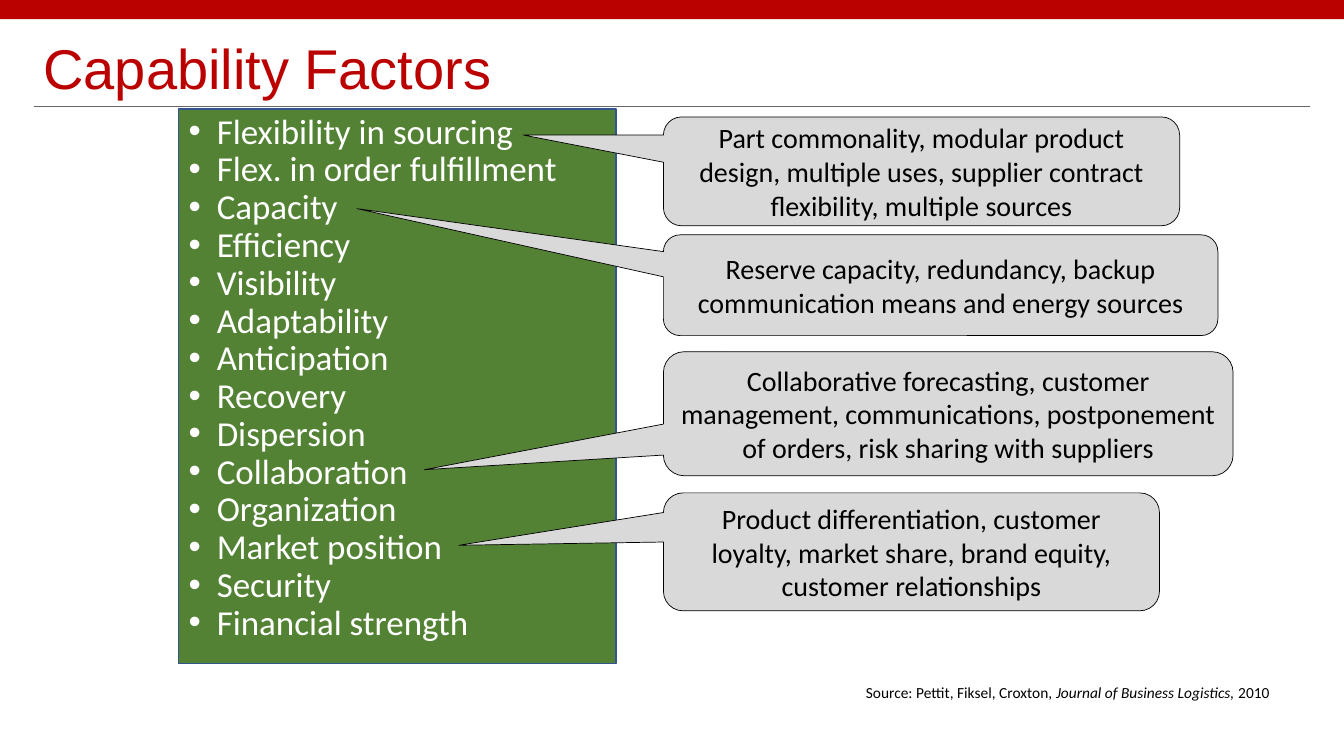
"""Build the Capability Factors slide."""
from dataclasses import dataclass

import pptx
import pptx.dml.color
import pptx.enum.shapes
import pptx.enum.text
import pptx.oxml
import pptx.oxml.ns
import pptx.util

Inches = pptx.util.Inches
Pt = pptx.util.Pt
Shape = pptx.enum.shapes.MSO_SHAPE
Align = pptx.enum.text.PP_ALIGN
Anchor = pptx.enum.text.MSO_ANCHOR

COLORS = {
    "red": "BB0000",
    "rule": "666666",
    "green": "548235",
    "panel_edge": "325491",
    "callout": "D9D9D9",
    "black": "000000",
    "white": "FFFFFF",
}
CALLOUT_LEFT = 6.58
FACTORS = [
    "Flexibility in sourcing", "Flex. in order fulfillment", "Capacity", "Efficiency",
    "Visibility", "Adaptability", "Anticipation", "Recovery", "Dispersion",
    "Collaboration", "Organization", "Market position", "Security", "Financial strength",
]


@dataclass
class Callout:
    """Describe a callout by its box and the point of its tail."""
    top: float
    width: float
    height: float
    tip_x: float
    tip_y: float
    text: str


CALLOUTS = [
    Callout(1.16, 5.12, 1.08, 5.19, 1.34,
            "Part commonality, modular product design, multiple uses, "
            "supplier contract flexibility, multiple sources"),
    Callout(2.33, 5.5, 1, 3.54, 2.07,
            "Reserve capacity, redundancy, backup communication means and energy sources"),
    Callout(3.49, 5.65, 1.23, 4.21, 4.66,
            "Collaborative forecasting, customer management, communications, "
            "postponement of orders, risk sharing with suppliers"),
    Callout(4.89, 4.92, 1.17, 4.55, 5.41,
            "Product differentiation, customer loyalty, market share, "
            "brand equity, customer relationships"),
]


def color(name: str) -> pptx.dml.color.RGBColor:
    """Return the named colour."""
    return pptx.dml.color.RGBColor.from_string(COLORS[name])


def paint(shape, fill: str, line: str = "", width: float = 0) -> None:
    """Set the fill and outline of a shape."""
    shape.fill.solid()
    shape.fill.fore_color.rgb = color(fill)
    if line:
        shape.line.color.rgb = color(line)
        shape.line.width = Pt(width)
    else:
        shape.line.fill.background()


def place(shape, left: float, top: float, width: float, height: float) -> None:
    """Move and size a shape."""
    shape.left, shape.top = Inches(left), Inches(top)
    shape.width, shape.height = Inches(width), Inches(height)


def set_frame(shape, anchor: Anchor):
    """Prepare a wrapping text frame and return it."""
    frame = shape.text_frame
    frame.word_wrap = True
    frame.auto_size = pptx.enum.text.MSO_AUTO_SIZE.NONE
    frame.vertical_anchor = anchor
    return frame


def add_run(paragraph, text: str, size: float, color_name: str,
            font: str = "Calibri", italic: bool = False) -> None:
    """Add a formatted run to a paragraph."""
    run = paragraph.add_run()
    run.text = text
    run.font.size = Pt(size)
    run.font.name = font
    run.font.italic = italic
    run.font.color.rgb = color(color_name)


def add_bullet(paragraph) -> None:
    """Give a paragraph a hanging bullet."""
    properties = paragraph._p.get_or_add_pPr()
    properties.set("marL", str(Inches(0.28)))
    properties.set("indent", str(Inches(-0.28)))
    namespace = pptx.oxml.ns.nsdecls("a")
    properties.append(pptx.oxml.parse_xml(f'<a:buFont {namespace} typeface="Arial"/>'))
    properties.append(pptx.oxml.parse_xml(f'<a:buChar {namespace} char="•"/>'))


def add_header(slide) -> None:
    """Draw the top band, the rule and the title."""
    rule = slide.shapes.add_connector(
        pptx.enum.shapes.MSO_CONNECTOR.STRAIGHT,
        Inches(0.34), Inches(1.06), Inches(12.99), Inches(1.06))
    rule.line.color.rgb = color("rule")
    rule.line.width = Pt(0.5)
    rule._element.spPr.append(
        pptx.oxml.parse_xml(f'<a:effectLst {pptx.oxml.ns.nsdecls("a")}/>'))
    band = slide.shapes.add_shape(Shape.RECTANGLE, 0, 0, Inches(13.33), Inches(0.19))
    band.shadow.inherit = False
    paint(band, "red")
    title = slide.shapes.title
    place(title, 0.33, 0.25, 8.21, 0.81)
    paragraph = set_frame(title, Anchor.BOTTOM).paragraphs[0]
    paragraph.alignment = Align.LEFT
    paragraph.line_spacing = 0.9
    add_run(paragraph, "Capability Factors", 40, "red", "Arial")


def add_factors(slide) -> None:
    """Fill the body placeholder with the list of factors."""
    body = slide.placeholders[1]
    place(body, 1.77, 1.08, 4.34, 5.5)
    paint(body, "green", "panel_edge", 1)
    frame = set_frame(body, Anchor.TOP)
    for index, factor in enumerate(FACTORS):
        paragraph = frame.add_paragraph() if index else frame.paragraphs[0]
        paragraph.line_spacing = 0.9
        paragraph.space_before = Pt(0)
        add_bullet(paragraph)
        add_run(paragraph, factor, 25, "white")


def add_callout(slide, callout: Callout) -> None:
    """Draw a callout whose tail ends at its tip."""
    shape = slide.shapes.add_shape(
        Shape.ROUNDED_RECTANGULAR_CALLOUT, Inches(CALLOUT_LEFT), Inches(callout.top),
        Inches(callout.width), Inches(callout.height))
    shape.adjustments[0] = (callout.tip_x - CALLOUT_LEFT) / callout.width - 0.5
    shape.adjustments[1] = (callout.tip_y - callout.top) / callout.height - 0.5
    shape.shadow.inherit = False
    paint(shape, "callout", "black", 0.5)
    paragraph = set_frame(shape, Anchor.MIDDLE).paragraphs[0]
    paragraph.alignment = Align.CENTER
    add_run(paragraph, callout.text, 20, "black")


def add_source(slide) -> None:
    """Write the citation."""
    box = slide.shapes.add_textbox(Inches(7.5), Inches(6.73), Inches(5.19), Inches(0.29))
    paragraph = set_frame(box, Anchor.TOP).paragraphs[0]
    paragraph.alignment = Align.RIGHT
    add_run(paragraph, "Source: Pettit, Fiksel, Croxton, ", 11, "black")
    add_run(paragraph, "Journal of Business Logistics,", 11, "black", italic=True)
    add_run(paragraph, " 2010", 11, "black")


def main() -> None:
    """Build and save the presentation."""
    presentation = pptx.Presentation()
    presentation.slide_width = Inches(13.33)
    presentation.slide_height = Inches(7.5)
    slide = presentation.slides.add_slide(presentation.slide_layouts[1])
    add_header(slide)
    add_factors(slide)
    for callout in CALLOUTS:
        add_callout(slide, callout)
    add_source(slide)
    presentation.save("out.pptx")


if __name__ == "__main__":
    main()
